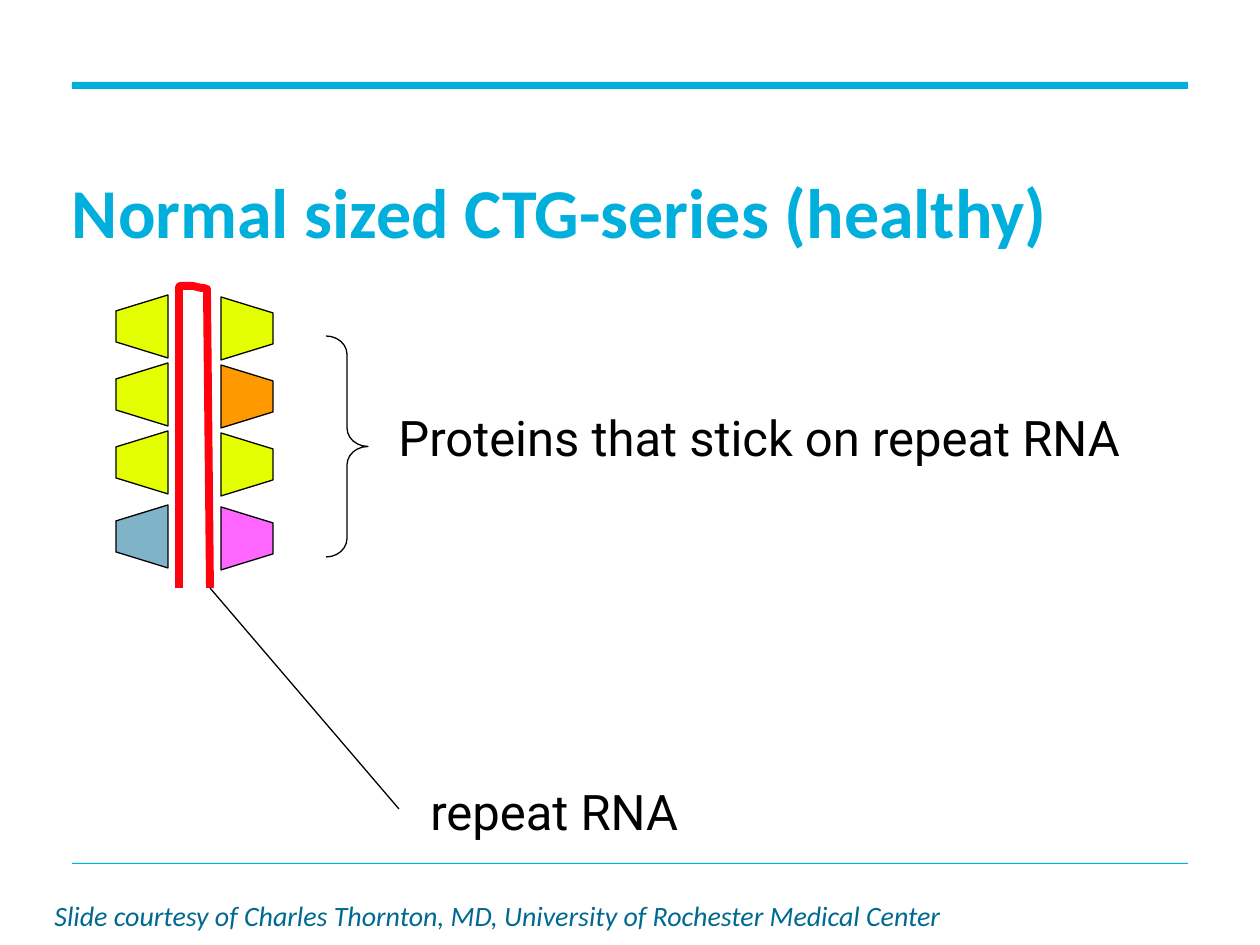
from lxml import etree
from pptx import Presentation
from pptx import util as u
from pptx.dml.color import RGBColor
from pptx.enum import shapes, text

CYAN = RGBColor(0x00, 0xAF, 0xDC)
TEAL = RGBColor(0x00, 0x69, 0x91)
BLACK = RGBColor(0x00, 0x00, 0x00)
RED = RGBColor(0xFF, 0x02, 0x0E)
LIME = RGBColor(0xE3, 0xFF, 0x01)
STEEL = RGBColor(0x7F, 0xB4, 0xC8)
AMBER = RGBColor(0xFF, 0x99, 0x00)
PINK = RGBColor(0xFF, 0x66, 0xFF)
SCALE = 914400 / 126

TITLE = "Normal sized CTG-series (healthy)"
LABELS = [
    ("Proteins that stick on repeat RNA", (386, 401, 750, 72), False, 28, "Roboto", BLACK, False),
    ("repeat RNA", (418, 775, 275, 72), False, 28, "Roboto", BLACK, False),
    ("Slide courtesy of Charles Thornton, MD, University of Rochester Medical Center",
     (42, 892, 1166, 47), True, 16, "Calibri", TEAL, True),
]
RULES = [(72, 82, 1116, 7), (72, 863, 1116, 1)]
PROTEINS = [(295, LIME, LIME), (363, LIME, AMBER), (431, LIME, LIME), (505, STEEL, PINK)]
SIDES = [(168, -52, 0), (221, 52, 2)]
DEPTH, INSET = 63, 16
CURVES = [
    ((179, 295), (179, 292), (178, 286), (181, 286)),
    ((181, 286), (190, 284), (207, 289), (207, 289)),
]
STEPS = 8


def px(*nums):
    return [u.Emu(round(n * SCALE)) for n in nums]


def style(shape, fill, line, width=0.75):
    shape.shadow.inherit = False
    if fill is None:
        shape.fill.background()
    else:
        shape.fill.solid()
        shape.fill.fore_color.rgb = fill
    if line is None:
        shape.line.fill.background()
    else:
        shape.line.color.rgb = line
        shape.line.width = u.Pt(width)


def trace(points, close):
    pen = slide.shapes.build_freeform(*points[0], scale=SCALE)
    pen.add_line_segments(points[1:], close=close)
    return pen.convert_to_shape()


def bezier(a, b, c, d):
    for i in range(1, STEPS + 1):
        t = i / STEPS
        s = 1 - t
        yield tuple(round(s**3 * h + 3 * s * s * t * j + 3 * s * t * t * k + t**3 * m, 2)
                    for h, j, k, m in zip(a, b, c, d))


def write(para, words, size, font, color, bold=False, italic=False):
    run = para.add_run()
    run.text = words
    face = run.font
    face.size, face.name = u.Pt(size), font
    face.bold, face.italic = bold, italic
    face.color.rgb = color


deck = Presentation()
deck.slide_width, deck.slide_height = px(1260, 945)
slide = deck.slides.add_slide(deck.slide_layouts[5])

for box in RULES:
    rule = slide.shapes.add_shape(shapes.MSO_SHAPE.RECTANGLE, *px(*box))
    style(rule, CYAN, None)

for top, *fills in PROTEINS:
    for (x, reach, drop), fill in zip(SIDES, fills):
        y = top + drop
        corners = [(x, y), (x + reach, y + INSET),
                   (x + reach, y + DEPTH - INSET), (x, y + DEPTH)]
        style(trace(corners, True), fill, BLACK)

strand = [(179, 588), CURVES[0][0]]
for curve in CURVES:
    strand += bezier(*curve)
strand.append((210, 588))
style(trace(strand, False), None, RED, 4.5)

lead = slide.shapes.add_connector(shapes.MSO_CONNECTOR.STRAIGHT, *px(210, 588, 399, 809))
lead.line.color.rgb = BLACK
lead.line.width = u.Pt(0.75)
etree.SubElement(lead.element.spPr,
                 "{http://schemas.openxmlformats.org/drawingml/2006/main}effectLst")

brace = slide.shapes.add_shape(shapes.MSO_SHAPE.RIGHT_BRACE, *px(326, 336, 42, 221))
brace.adjustments[0], brace.adjustments[1] = 0.44, 0.5
style(brace, None, BLACK)

for words, box, wrap, size, font, color, italic in LABELS:
    frame = slide.shapes.add_textbox(*px(*box)).text_frame
    frame.word_wrap = wrap
    frame.auto_size = text.MSO_AUTO_SIZE.SHAPE_TO_FIT_TEXT
    write(frame.paragraphs[0], words, size, font, color, italic=italic)

title = slide.shapes.title
title.left, title.top, title.width, title.height = px(72, 137, 1168, 158)
frame = title.text_frame
frame.margin_left = frame.margin_right = frame.margin_top = frame.margin_bottom = 0
frame.vertical_anchor = text.MSO_ANCHOR.MIDDLE
frame.word_wrap = True
frame.auto_size = text.MSO_AUTO_SIZE.NONE
para = frame.paragraphs[0]
para.alignment = text.PP_ALIGN.LEFT
para.line_spacing = u.Pt(42)
write(para, TITLE, 40, "Calibri", CYAN, bold=True)

deck.save("out.pptx")
